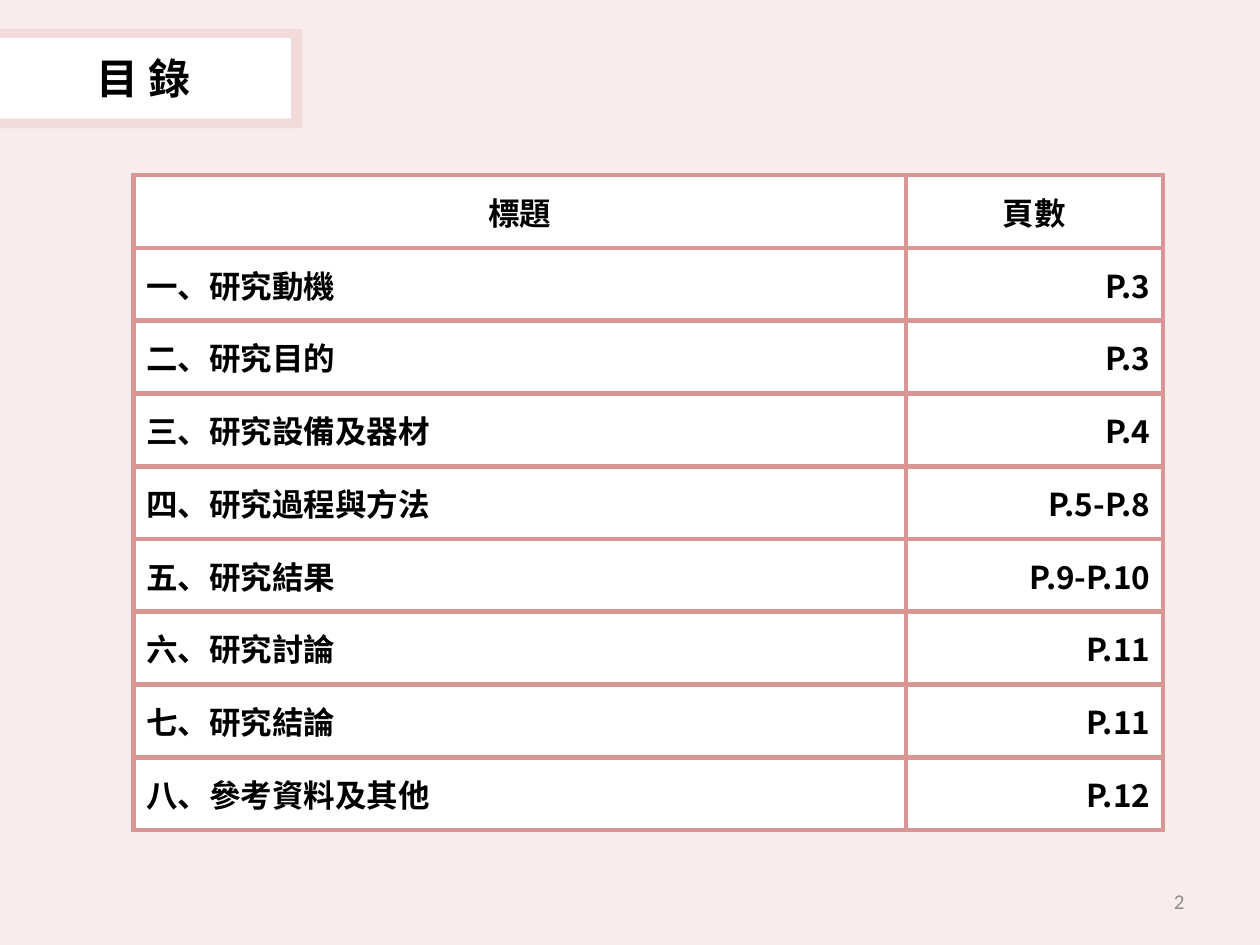
from dataclasses import dataclass

from lxml import etree
from pptx import Presentation
from pptx.dml.color import RGBColor
from pptx.enum.shapes import MSO_SHAPE
from pptx.enum.text import MSO_ANCHOR, PP_ALIGN
from pptx.oxml.ns import qn
from pptx.util import Inches, Pt

RECT = MSO_SHAPE.RECTANGLE
TOP, MIDDLE = MSO_ANCHOR.TOP, MSO_ANCHOR.MIDDLE
LEFT, CENTER, RIGHT = PP_ALIGN.LEFT, PP_ALIGN.CENTER, PP_ALIGN.RIGHT

COLORS = {"pink": "F2DCDB", "rose": "D99694", "white": "FFFFFF",
          "black": "000000", "gray": "8C8C8C"}
CJK = "Noto Sans CJK SC"
TITLE = {"size": Pt(24), "bold": True, "name": CJK}
BODY = {"size": Pt(18), "bold": True, "name": CJK}
NUMBER = {"size": Pt(12), "bold": False, "name": "Calibri"}

HEAD = ("標題", "頁數")
ROWS = [
    ("一、研究動機", "P.3"),
    ("二、研究目的", "P.3"),
    ("三、研究設備及器材", "P.4"),
    ("四、研究過程與方法", "P.5-P.8"),
    ("五、研究結果", "P.9-P.10"),
    ("六、研究討論", "P.11"),
    ("七、研究結論", "P.11"),
    ("八、參考資料及其他", "P.12"),
]
WIDTHS = (6.13, 2.04)
HEIGHT = 5.2


@dataclass
class Panel:
    left: float
    top: float
    width: float
    height: float
    color: str
    alpha: int = 100


@dataclass
class Label:
    left: float
    top: float
    width: float
    height: float
    text: str
    style: dict
    color: str
    align: PP_ALIGN
    anchor: MSO_ANCHOR
    wrap: bool


PANELS = [
    Panel(0, 0, 10, 7.5, "pink", 50),        # background tint
    Panel(0, 0.23, 2.4, 0.79, "pink"),       # title frame
    Panel(0, 0.3, 2.31, 0.64, "white"),      # title plate
]
LABELS = [
    Label(0.67, 0.37, 0.96, 0.5, "目 錄", TITLE, "black", LEFT, TOP, False),
    Label(7.17, 6.95, 2.33, 0.4, "2", NUMBER, "gray", RIGHT, MIDDLE, True),
]


def paint(fill, color: str) -> None:
    fill.solid()
    fill.fore_color.rgb = RGBColor.from_string(COLORS[color])


def write(frame, text: str, style: dict, color: str, align: PP_ALIGN) -> None:
    para = frame.paragraphs[0]
    para.alignment = align
    run = para.add_run()
    run.text = text
    paint(run.font.fill, color)
    for key, value in style.items():
        setattr(run.font, key, value)
    # East Asian glyphs take their font from a:ea
    latin = run.font._element.find(qn("a:latin"))
    east = etree.Element(qn("a:ea"), typeface=style["name"])
    latin.addnext(east)


def draw_panel(slide, panel: Panel) -> None:
    shape = slide.shapes.add_shape(
        RECT, Inches(panel.left), Inches(panel.top),
        Inches(panel.width), Inches(panel.height))
    shape.shadow.inherit = False
    paint(shape.fill, panel.color)
    shape.line.fill.background()
    if panel.alpha < 100:
        tone = shape._element.spPr.find(f".//{qn('a:srgbClr')}")
        etree.SubElement(tone, qn("a:alpha"), val=str(panel.alpha * 1000))


def draw_label(slide, label: Label) -> None:
    box = slide.shapes.add_textbox(
        Inches(label.left), Inches(label.top),
        Inches(label.width), Inches(label.height))
    frame = box.text_frame
    frame.word_wrap = label.wrap
    frame.vertical_anchor = label.anchor
    write(frame, label.text, label.style, label.color, label.align)


def add_border(cell, color: str, width: int) -> None:
    props = cell._tc.get_or_add_tcPr()
    for spot, side in enumerate(("a:lnL", "a:lnR", "a:lnT", "a:lnB")):
        line = etree.Element(qn(side), w=str(width))
        fill = etree.SubElement(line, qn("a:solidFill"))
        etree.SubElement(fill, qn("a:srgbClr"), val=COLORS[color])
        props.insert(spot, line)


def draw_table(slide) -> None:
    lines = [HEAD, *ROWS]
    table = slide.shapes.add_table(
        len(lines), len(HEAD), Inches(1.06), Inches(1.39),
        Inches(sum(WIDTHS)), Inches(HEIGHT)).table
    table.horz_banding = False
    for col, width in zip(table.columns, WIDTHS):
        col.width = Inches(width)
    for row, line in enumerate(lines):
        aligns = (LEFT, RIGHT) if row else (CENTER, CENTER)
        for col, (text, align) in enumerate(zip(line, aligns)):
            cell = table.cell(row, col)
            cell.vertical_anchor = MIDDLE
            paint(cell.fill, "white")
            add_border(cell, "rose", Pt(3))
            write(cell.text_frame, text, BODY, "black", align)


def main() -> None:
    deck = Presentation()
    deck.slide_width, deck.slide_height = Inches(10), Inches(7.5)
    slide = deck.slides.add_slide(deck.slide_layouts[6])
    for panel in PANELS:
        draw_panel(slide, panel)
    for label in LABELS:
        draw_label(slide, label)
    draw_table(slide)
    deck.save("out.pptx")


if __name__ == "__main__":
    main()
